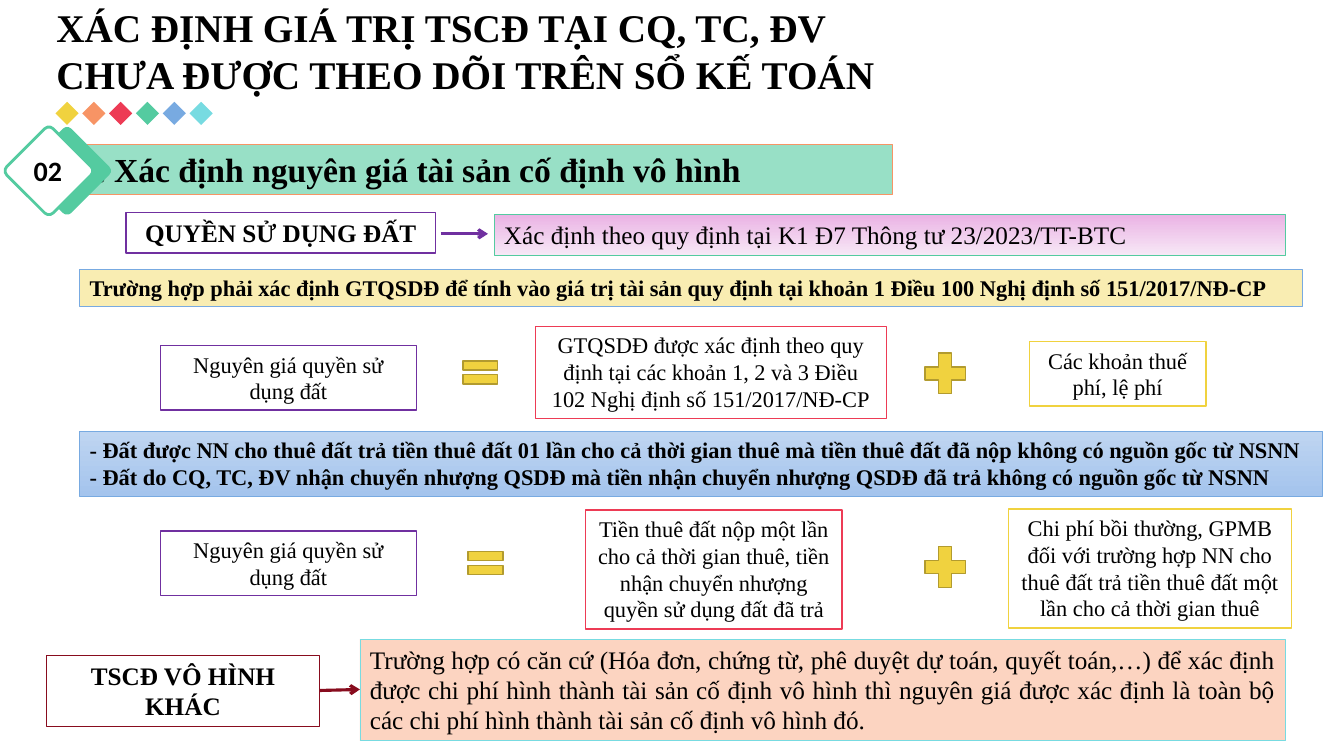
from lxml import etree
from pptx import Presentation
from pptx.dml.color import RGBColor
from pptx.enum.shapes import MSO_CONNECTOR, MSO_SHAPE as Preset
from pptx.enum.text import MSO_ANCHOR, MSO_AUTO_SIZE, PP_ALIGN as Align
from pptx.oxml.ns import qn
from pptx.util import Inches, Pt

COLORS = {
    "black": "000000", "white": "FFFFFF", "yellow": "F0D23F",
    "orange": "F79465", "red": "ED3B55", "green": "54CBA0",
    "blue": "78AAE1", "cyan": "77DBE1", "purple": "7030A0",
    "maroon": "880C1E", "olive": "B29B2F", "mint": "98E0C6",
    "cream": "F9EDB2", "peach": "FCD4C1", "pink": "EAB3E4",
    "pale pink": "F7E7F6", "sky": "BFD5F1", "deep sky": "A4C4ED",
}
RGB = {name: RGBColor.from_string(value) for name, value in COLORS.items()}

prs = Presentation()
prs.slide_width, prs.slide_height = Inches(13.33), Inches(7.5)
slide = prs.slides.add_slide(prs.slide_layouts[6])
shapes = slide.shapes


def add_preset(preset, box, fill, line=None, weight=1):
    """Draw a shape; a fill of two names is a gradient from top to bottom."""
    shape = shapes.add_shape(preset, *map(Inches, box))
    shape.shadow.inherit = False
    if isinstance(fill, tuple):
        shape.fill.gradient()
        shape.fill.gradient_angle = 270
        for stop, name in zip(shape.fill.gradient_stops, fill):
            stop.color.rgb = RGB[name]
    else:
        shape.fill.solid()
        shape.fill.fore_color.rgb = RGB[fill]
    if line:
        shape.line.color.rgb = RGB[line]
        shape.line.width = Pt(weight)
    else:
        shape.line.fill.background()
    return shape


def write(shape, lines, size, bold=False, align=Align.LEFT, font="Times New Roman"):
    frame = shape.text_frame
    frame.word_wrap = True
    frame.auto_size = MSO_AUTO_SIZE.SHAPE_TO_FIT_TEXT
    frame.vertical_anchor = MSO_ANCHOR.TOP
    for i, line in enumerate(lines):
        paragraph = frame.add_paragraph() if i else frame.paragraphs[0]
        paragraph.alignment = align
        run = paragraph.add_run()
        run.text = line
        run.font.name, run.font.size, run.font.bold = font, Pt(size), bold
        run.font.color.rgb = RGB["black"]


# Title and its row of diamonds
title = shapes.add_textbox(Inches(0.46), Inches(-0.02), Inches(9.05), Inches(1.04))
write(title, ["XÁC ĐỊNH GIÁ TRỊ TSCĐ TẠI CQ, TC, ĐV CHƯA ĐƯỢC THEO DÕI TRÊN SỔ KẾ TOÁN"],
      28, bold=True)
for i, color in enumerate(["yellow", "orange", "red", "green", "blue", "cyan"]):
    add_preset(Preset.DIAMOND, (0.55 + 0.266 * i, 1.01, 0.23, 0.23), color)

# Headings and rules: box, fill, line, lines of text, size, bold, alignment
bands = [
    ((0.7, 1.43, 8.15, 0.5), "mint", "orange",
     ["2. Xác định nguyên giá tài sản cố định vô hình"], 24, True, Align.LEFT),
    ((4.9, 2.13, 7.85, 0.4), ("pink", "pale pink"), "green",
     ["Xác định theo quy định tại K1 Đ7 Thông tư 23/2023/TT-BTC"],
     18, False, Align.LEFT),
    ((0.79, 2.67, 12.13, 0.37), "cream", "blue",
     ["Trường hợp phải xác định GTQSDĐ để tính vào giá trị tài sản quy định "
      "tại khoản 1 Điều 100 Nghị định số 151/2017/NĐ-CP"], 16, True, Align.LEFT),
    ((0.79, 4.28, 12.33, 0.64), ("sky", "deep sky"), "blue",
     ["- Đất được NN cho thuê đất trả tiền thuê đất 01 lần cho cả thời gian thuê "
      "mà tiền thuê đất đã nộp không có nguồn gốc từ NSNN",
      "- Đất do CQ, TC, ĐV nhận chuyển nhượng QSDĐ mà tiền nhận chuyển nhượng "
      "QSDĐ đã trả không có nguồn gốc từ NSNN"], 16, True, Align.JUSTIFY),
    ((3.57, 6.34, 9.18, 1.01), "peach", "cyan",
     ["Trường hợp có căn cứ (Hóa đơn, chứng từ, phê duyệt dự toán, quyết toán,…) "
      "để xác định được chi phí hình thành tài sản cố định vô hình thì nguyên giá "
      "được xác định là toàn bộ các chi phí hình thành tài sản cố định vô hình đó."],
     18, False, Align.JUSTIFY),
]
for box, fill, line, lines, size, bold, align in bands:
    write(add_preset(Preset.RECTANGLE, box, fill, line, 0.5), lines, size, bold, align)

# Asset kinds, each with an arrow to its rule
kinds = [
    ("QUYỀN SỬ DỤNG ĐẤT", (1.25, 2.11, 3.07, 0.4), "purple", (4.37, 2.32, 4.84, 2.32)),
    ("TSCĐ VÔ HÌNH KHÁC", (0.46, 6.5, 2.71, 0.71), "maroon", (3.17, 6.85, 3.57, 6.84)),
]
for kind, box, color, ends in kinds:
    write(add_preset(Preset.RECTANGLE, box, "white", color), [kind], 18, True, Align.CENTER)
    arrow = shapes.add_connector(MSO_CONNECTOR.STRAIGHT, *map(Inches, ends))
    arrow.line.color.rgb = RGB[color]
    arrow.line.width = Pt(2.25)
    etree.SubElement(arrow.line._get_or_add_ln(), qn("a:tailEnd"), type="arrow")
    etree.SubElement(arrow._element.spPr, qn("a:effectLst"))

# Equations: original cost = main value + other costs
equations = [
    ((1.59, 3.43, 2.54, 0.64), (4.53, 3.5), (9.1, 3.43),
     "GTQSDĐ được xác định theo quy định tại các khoản 1, 2 và 3 Điều 102 "
     "Nghị định số 151/2017/NĐ-CP", (5.31, 3.24, 3.48, 0.91),
     "Các khoản thuế phí, lệ phí", (10.21, 3.39, 1.75, 0.64)),
    ((1.59, 5.27, 2.54, 0.64), (4.58, 5.39), (9.1, 5.35),
     "Tiền thuê đất nộp một lần cho cả thời gian thuê, tiền nhận chuyển nhượng "
     "quyền sử dụng đất đã trả", (5.81, 5.06, 2.54, 1.18),
     "Chi phí bồi thường, GPMB đối với trường hợp NN cho thuê đất trả tiền thuê "
     "đất một lần cho cả thời gian thuê", (10, 5.05, 2.81, 1.18)),
]
for cost_box, equal_at, plus_at, value, value_box, extra, extra_box in equations:
    for term, box, color in [("Nguyên giá quyền sử dụng đất", cost_box, "purple"),
                             (value, value_box, "red"), (extra, extra_box, "yellow")]:
        write(add_preset(Preset.RECTANGLE, box, "white", color), [term], 16,
              align=Align.CENTER)
    add_preset(Preset.MATH_EQUAL, (*equal_at, 0.47, 0.39), "yellow", "olive")
    add_preset(Preset.MATH_PLUS, (*plus_at, 0.55, 0.55), "yellow", "olive")

# Section number badge
for left, fill, line in [(0.34, "green", None), (0.16, "white", "green")]:
    tile = add_preset(Preset.ROUNDED_RECTANGLE, (left, 1.37, 0.65, 0.65), fill, line, 2)
    tile.adjustments[0] = 0.09
    tile.rotation = 45
number = shapes.add_textbox(Inches(0.23), Inches(1.47), Inches(0.49), Inches(0.44))
write(number, ["02"], 20, True, Align.CENTER, "Calibri")

prs.save("out.pptx")
